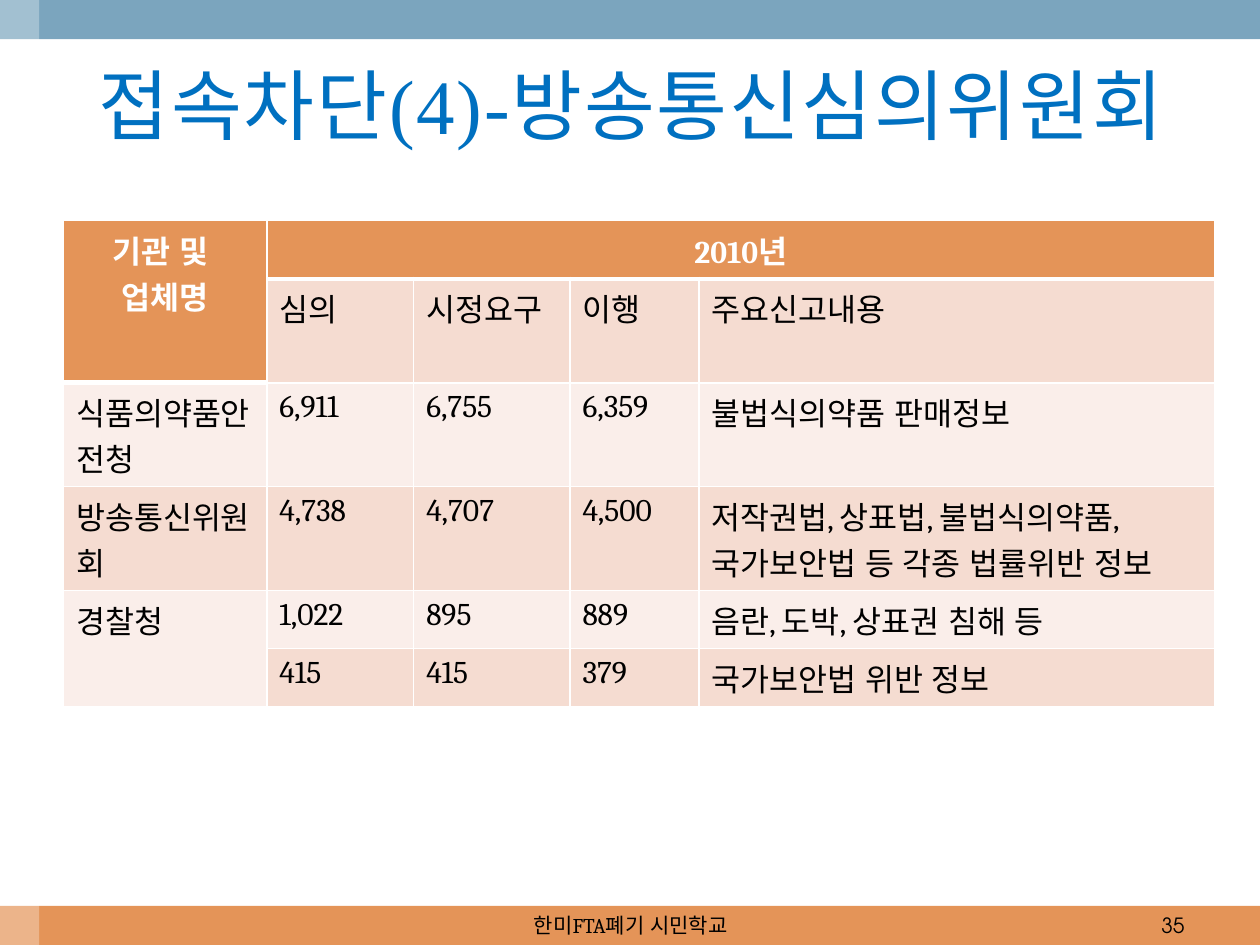
from dataclasses import dataclass

from lxml.etree import SubElement
from pptx import Presentation
from pptx.dml.color import RGBColor
from pptx.enum.lang import MSO_LANGUAGE_ID
from pptx.enum.shapes import MSO_SHAPE
from pptx.enum.text import MSO_ANCHOR, PP_ALIGN
from pptx.oxml.ns import qn
from pptx.util import Cm, Pt


@dataclass(frozen=True)
class Theme:
    orange: str = "E49458"
    blue: str = "7BA5BE"
    title: str = "0070C0"
    dark_band: str = "F5DCD1"
    light_band: str = "FAEEEA"
    white: str = "FFFFFF"
    black: str = "000000"
    body_font: str = "Cambria"
    title_font: str = "Times New Roman"
    number_font: str = "TeX Gyre Adventor"
    title_size: int = 44
    body_size: int = 18
    footer_size: int = 12


T = Theme()


def write(tf, text, font=T.body_font, size=T.body_size, color=T.black,
          bold=False, align=PP_ALIGN.LEFT, spacing=0):
    """Fill a text frame, one paragraph per line of text."""
    tf.word_wrap = True
    for i, line in enumerate(text.split("\n")):
        p = tf.add_paragraph() if i else tf.paragraphs[0]
        p.alignment = align
        r = p.add_run()
        r.text = line
        r.font.name, r.font.size, r.font.bold = font, Pt(size), bold
        r.font.color.rgb = RGBColor.from_string(color)
        r.font.language_id = MSO_LANGUAGE_ID.KOREAN
        if spacing:
            r.font._element.set("spc", str(spacing * 100))


def set_borders(cell, color, **widths):
    """Draw the cell's sides; widths in points by side L, R, T, B."""
    tcPr = cell._tc.get_or_add_tcPr()
    for i, (side, width) in enumerate(widths.items()):
        ln = SubElement(tcPr, qn(f"a:ln{side}"), w=str(Pt(width)))
        fill = SubElement(ln, qn("a:solidFill"))
        SubElement(fill, qn("a:srgbClr"), val=color)
        tcPr.insert(i, ln)


prs = Presentation()
prs.slide_width, prs.slide_height = Cm(25.4), Cm(19.05)
s = prs.slides.add_slide(prs.slide_layouts[6])

# Bottom and top bars, then the translucent strip on the left
BAR = 0.79
for x, y, w, h, color, alpha in [
    (0, 19.05 - BAR, 25.4, BAR, T.orange, 100),
    (0, 0, 25.4, BAR, T.blue, 100),
    (0, 0, BAR, 19.05, T.white, 30),
]:
    sp = s.shapes.add_shape(MSO_SHAPE.RECTANGLE, Cm(x), Cm(y), Cm(w), Cm(h))
    sp.shadow.inherit = False
    sp.fill.solid()
    sp.fill.fore_color.rgb = RGBColor.from_string(color)
    sp.line.fill.background()
    if alpha < 100:
        clr = sp._element.spPr.find(".//" + qn("a:srgbClr"))
        SubElement(clr, qn("a:alpha"), val=str(alpha * 1000))

# Table of takedown requests by agency
rows = [
    ["기관 및 \n업체명", "2010년", "", "", ""],
    ["", "심의", "시정요구", "이행", "주요신고내용"],
    ["식품의약품안전청", "6,911", "6,755", "6,359", "불법식의약품 판매정보"],
    ["방송통신위원회", "4,738", "4,707", "4,500",
     "저작권법, 상표법, 불법식의약품, 국가보안법 등 각종 법률위반 정보"],
    ["경찰청", "1,022", "895", "889", "음란, 도박, 상표권 침해 등"],
    ["", "415", "415", "379", "국가보안법 위반 정보"],
]
col_widths = [4.1, 2.96, 3.15, 2.6, 10.4]
row_heights = [1.02, 1.27, 1.02, 1.02, 1.02, 1.02]

frame = s.shapes.add_table(len(rows), len(col_widths), Cm(1.28), Cm(4.45),
                           Cm(sum(col_widths)), Cm(sum(row_heights)))
table = frame.table
for col, width in zip(table.columns, col_widths):
    col.width = Cm(width)
for row, height in zip(table.rows, row_heights):
    row.height = Cm(height)

for first, last in [((0, 0), (1, 0)), ((0, 1), (0, 4)), ((4, 0), (5, 0))]:
    table.cell(*first).merge(table.cell(*last))

for i, row in enumerate(rows):
    for j, text in enumerate(row):
        cell = table.cell(i, j)
        header = i == 0 or (i == 1 and j == 0)
        light = i % 2 == 0 or (i == 5 and j == 0)
        band = T.light_band if light else T.dark_band
        cell.fill.solid()
        cell.fill.fore_color.rgb = RGBColor.from_string(T.orange if header else band)
        below_header = i == 1 and j > 0 or i == 2 and j == 0
        set_borders(cell, T.white, L=1, R=1,
                    T=3 if below_header else 1, B=3 if header else 1)
        if text:
            write(cell.text_frame, text, bold=header,
                  color=T.white if header else T.black,
                  align=PP_ALIGN.CENTER if header else PP_ALIGN.LEFT)

# Title, page number and footer
for x, y, w, h, text, style in [
    (0.84, BAR, 23.77, 2.62, "접속차단(4)-방송통신심의위원회",
     dict(font=T.title_font, size=T.title_size, color=T.title,
          align=PP_ALIGN.CENTER, spacing=1)),
    (18.21, 19.05 - BAR, 5.92, BAR, "35",
     dict(font=T.number_font, size=T.footer_size, align=PP_ALIGN.RIGHT)),
    (8.69, 19.05 - BAR, 8.05, BAR, "한미FTA폐기 시민학교",
     dict(size=T.footer_size, align=PP_ALIGN.CENTER)),
]:
    tf = s.shapes.add_textbox(Cm(x), Cm(y), Cm(w), Cm(h)).text_frame
    tf.vertical_anchor = MSO_ANCHOR.MIDDLE
    write(tf, text, **style)

prs.save("out.pptx")
